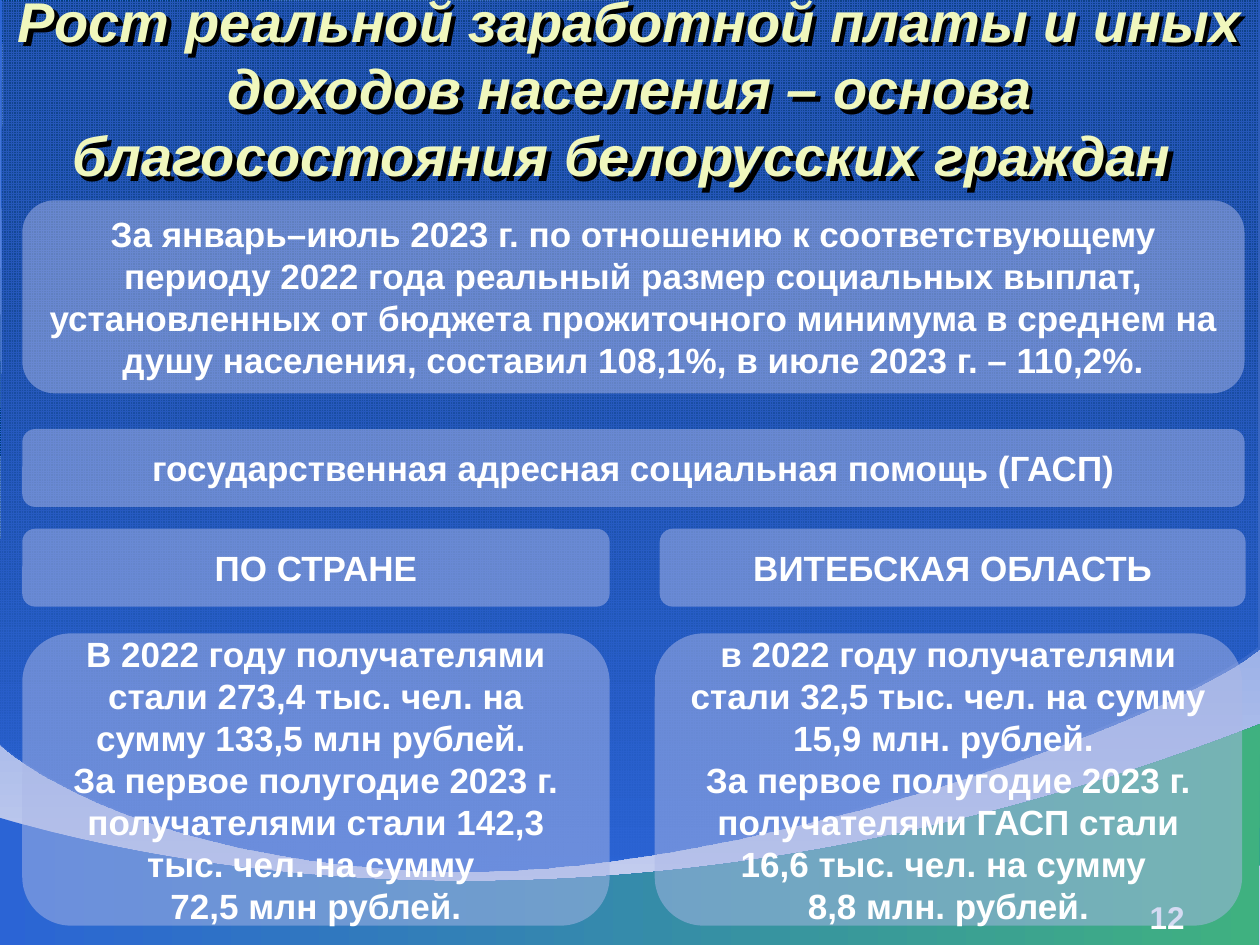
from lxml.etree import SubElement
from pptx import Presentation
from pptx.dml.color import RGBColor
from pptx.enum.dml import MSO_PATTERN
from pptx.enum.shapes import MSO_SHAPE
from pptx.enum.text import MSO_ANCHOR, MSO_AUTO_SIZE, PP_ALIGN as Align
from pptx.oxml.ns import qn
from pptx.util import Cm, Pt

# Content
TITLE = ("Рост реальной заработной платы и иных доходов населения – "
         "основа благосостояния белорусских граждан ")
PAGE_NUMBER = "12"
INTRO = ("За январь–июль 2023 г. по отношению к соответствующему периоду 2022 года "
         "реальный размер социальных выплат, установленных от бюджета прожиточного "
         "минимума в среднем на душу населения, составил 108,1%, в июле 2023 г. – 110,2%.")
AID = "государственная адресная социальная помощь (ГАСП)"
COUNTRY = [
    "В 2022 году получателями стали 273,4 тыс. чел. на сумму 133,5 млн рублей. ",
    "За первое полугодие 2023 г. получателями стали 142,3 тыс. чел. на сумму \n72,5 млн рублей.",
]
REGION = [
    "в 2022 году получателями стали 32,5 тыс. чел. на сумму 15,9 млн. рублей. ",
    "За первое полугодие 2023 г. получателями ГАСП стали 16,6 тыс. чел. на сумму \n8,8 млн. рублей.",
]

# Layout in cm
WIDTH, HEIGHT = 25.4, 19.05
LEFT, FULL, HALF, BAR = 0.45, 24.64, 11.84, 1.57
CARDS = [  # left, top, width, height, paragraphs
    (LEFT, 4.04, FULL, 3.89, [INTRO]),
    (LEFT, 8.65, FULL, BAR, [AID]),
    (LEFT, 12.77, HALF, 5.89, COUNTRY),
    (LEFT, 10.66, HALF, BAR, ["ПО СТРАНЕ"]),
    (13.3, 10.66, 11.81, BAR, ["ВИТЕБСКАЯ ОБЛАСТЬ"]),
    (13.2, 12.77, HALF, 5.89, REGION),
]

# Wave edges: start point and Bezier segments; then the closing corners
SKY_EDGE = [(0, 14.99), (0.3, 15.29), (2.84, 17.3), (8.71, 17.55),
            (14.61, 17.81), (23.77, 14.48), (25.4, 13.06)]
SKY_CORNERS = [(25.4, -0.03), (0.05, 0.03), (0.08, 0.05)]
HILL_EDGE = [(-0.03, 16.48), (0.28, 16.56), (3.28, 17.53), (7.75, 17.73),
             (12.22, 17.93), (18.34, 17.35), (25.4, 14.6)]
HILL_CORNERS = [(25.37, HEIGHT), (-0.08, HEIGHT)]

BLUE, NAVY, PALE, WHITE = "2B64D5", "003D7B", "ACB8E7", "FFFFFF"


def paint(color, value):
    color.rgb = RGBColor.from_string(value)


def set_alpha(parent, percent):
    for node in parent.iter(qn("a:srgbClr")):
        SubElement(node, qn("a:alpha"), val=str(percent * 1000))


def fill_gradient(fill, first, last, angle):
    fill.gradient()
    fill.gradient_angle = angle
    for stop, value, position in zip(fill.gradient_stops, (first, last), (0, 1)):
        paint(stop.color, value)
        stop.position = position


def bend(wave, count):
    """Turn the first line segments, three at a time, into Bezier curves."""
    lines = list(wave.element.iter(qn("a:lnTo")))[:count]
    for i in range(0, count, 3):
        group = lines[i:i + 3]
        outline = group[0].getparent()
        segment = SubElement(outline, qn("a:cubicBezTo"))
        outline.replace(group[0], segment)
        for line in group:
            segment.append(line[0])
        for line in group[1:]:
            outline.remove(line)


def add_wave(page, edge, corners, shift=0):
    points = [(Cm(x + shift), Cm(y + shift)) for x, y in edge + corners]
    builder = page.shapes.build_freeform(*points[0])
    builder.add_line_segments(points[1:], close=True)
    wave = builder.convert_to_shape()
    bend(wave, len(edge) - 1)
    wave.shadow.inherit = False
    wave.line.fill.background()
    return wave


def write(box, paragraphs, size, color, align=Align.CENTER, italic=False):
    frame = box.text_frame
    frame.word_wrap = True
    frame.auto_size = MSO_AUTO_SIZE.NONE
    for i, text in enumerate(paragraphs):
        para = frame.add_paragraph() if i else frame.paragraphs[0]
        para.text = text
        para.alignment = align
        font = para.font
        font.name, font.size, font.bold, font.italic = "Arial", Pt(size), True, italic
        paint(font.color, color)
    return frame


def add_text_shadow(box):
    # An unfilled box casts its shadow from the letters
    box.fill.background()
    effects = SubElement(box.element.spPr, qn("a:effectLst"))
    shadow = SubElement(effects, qn("a:outerShdw"), dist="45720", dir="2700000",
                        algn="ctr", rotWithShape="0")
    SubElement(shadow, qn("a:srgbClr"), val="000000")


def add_card(page, left, top, width, height, paragraphs):
    card = page.shapes.add_shape(MSO_SHAPE.ROUNDED_RECTANGLE,
                                 Cm(left), Cm(top), Cm(width), Cm(height))
    card.shadow.inherit = False
    card.line.fill.background()
    card.fill.solid()
    paint(card.fill.fore_color, PALE)
    set_alpha(card.element.spPr, 50)
    write(card, paragraphs, 20, WHITE).vertical_anchor = MSO_ANCHOR.MIDDLE


def main():
    deck = Presentation()
    deck.slide_width, deck.slide_height = Cm(WIDTH), Cm(HEIGHT)
    page = deck.slides.add_slide(deck.slide_layouts[5])

    # Background and waves
    fill_gradient(page.background.fill, BLUE, "CED4F0", 270)
    grid = add_wave(page, SKY_EDGE, SKY_CORNERS, shift=-0.03)
    grid.fill.patterned()
    grid.fill.pattern = MSO_PATTERN.SMALL_GRID
    paint(grid.fill.fore_color, BLUE)
    paint(grid.fill.back_color, NAVY)

    sky = add_wave(page, SKY_EDGE, SKY_CORNERS)
    fill_gradient(sky.fill, "1F4898", BLUE, 270)
    set_alpha(next(sky.element.iter(qn("a:gs"))), 46)

    hill = add_wave(page, HILL_EDGE, HILL_CORNERS)
    fill_gradient(hill.fill, BLUE, "3FB180", 0)

    # Page number
    number = page.shapes.add_textbox(Cm(18.21), Cm(17.98), Cm(5.92), Cm(0.69))
    write(number, [PAGE_NUMBER], 18, WHITE, Align.RIGHT)

    # Title, brought in front of the waves
    title = page.shapes.title
    title.left, title.top, title.width, title.height = Cm(0), Cm(0.2), Cm(WIDTH), Cm(3.12)
    frame = write(title, [TITLE], 32, "F0F7BD", italic=True)
    frame.vertical_anchor = MSO_ANCHOR.MIDDLE
    add_text_shadow(title)
    title.element.getparent().append(title.element)

    # Cards
    for card in CARDS:
        add_card(page, *card)

    deck.save("out.pptx")


if __name__ == "__main__":
    main()
